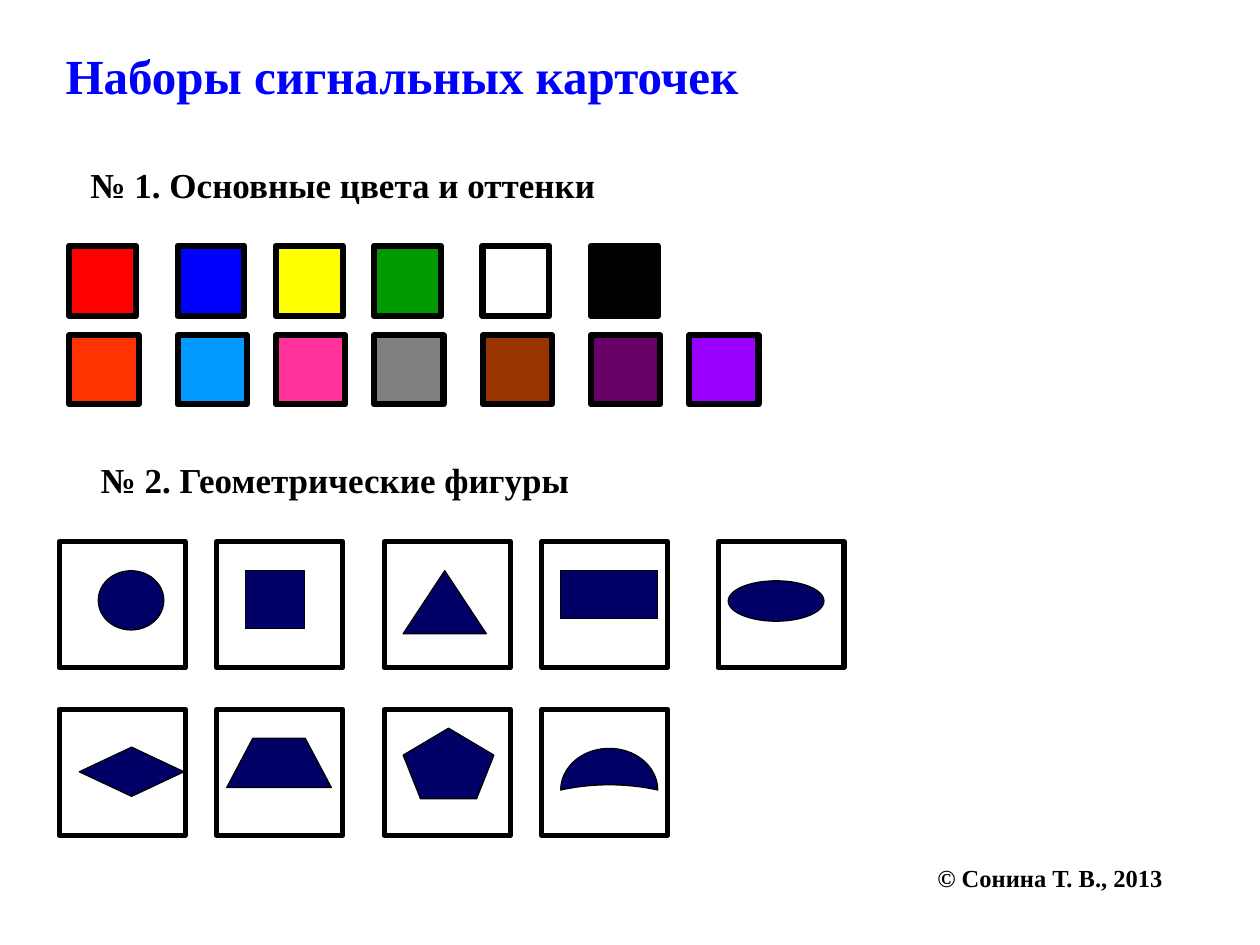
from pptx import Presentation
from pptx.dml.color import RGBColor
from pptx.enum.shapes import MSO_SHAPE as Shape
from pptx.enum.text import MSO_ANCHOR as Anchor, MSO_AUTO_SIZE as AutoSize, PP_ALIGN as Align
from pptx.util import Inches, Pt

FONT = "Times New Roman"
BLACK = RGBColor(0x00, 0x00, 0x00)
WHITE = RGBColor(0xFF, 0xFF, 0xFF)
BLUE = RGBColor(0x00, 0x00, 0xFF)
NAVY = RGBColor(0x00, 0x00, 0x66)
RED = RGBColor(0xFF, 0x00, 0x00)
YELLOW = RGBColor(0xFF, 0xFF, 0x00)
GREEN = RGBColor(0x00, 0x99, 0x00)
ORANGE = RGBColor(0xFF, 0x33, 0x00)
SKY = RGBColor(0x00, 0x99, 0xFF)
PINK = RGBColor(0xFF, 0x33, 0x99)
GRAY = RGBColor(0x80, 0x80, 0x80)
BROWN = RGBColor(0x99, 0x33, 0x00)
PLUM = RGBColor(0x66, 0x00, 0x66)
VIOLET = RGBColor(0x99, 0x00, 0xFF)

MAIN_COLORS = [RED, BLUE, YELLOW, GREEN, WHITE, BLACK]
SHADES = [ORANGE, SKY, PINK, GRAY, BROWN, PLUM, VIOLET]
COLOR_COLUMNS = [0, 0.86, 1.64, 2.42, 3.28, 4.14, 4.92]

CARD_SIZE = 1
CARD_COLUMNS = [0, 1.25, 2.58, 3.83, 5.23]
CARD_ROW_STEP = 1.33
# Each figure: shape, box relative to its card, rotation, adjustment
FIGURE_ROWS = [
    [
        (Shape.OVAL, (0.31, 0.23, 0.52, 0.47), 0, None),
        (Shape.RECTANGLE, (0.23, 0.23, 0.47, 0.46), 0, None),
        (Shape.ISOSCELES_TRIANGLE, (0.15, 0.23, 0.66, 0.5), 0, None),
        (Shape.RECTANGLE, (0.15, 0.23, 0.77, 0.38), 0, None),
        (Shape.OVAL, (0.08, 0.31, 0.76, 0.32), 0, None),
    ],
    [
        (Shape.DIAMOND, (0.38, 0.08, 0.39, 0.83), 270, None),
        (Shape.TRAPEZOID, (0.08, 0.23, 0.83, 0.39), 0, 0.53),
        (Shape.REGULAR_PENTAGON, (0.15, 0.15, 0.72, 0.56), 0, None),
        (Shape.MOON, (0.37, 0.09, 0.33, 0.77), 90, 0.875),
    ],
]


def add_figure(slide, kind, box, fill, line_width):
    sp = slide.shapes.add_shape(kind, *map(Inches, box))
    sp.shadow.inherit = False
    sp.fill.solid()
    sp.fill.fore_color.rgb = fill
    sp.line.color.rgb = BLACK
    sp.line.width = Pt(line_width)
    return sp


def write_line(sp, text, size, color=BLACK, align=Align.LEFT, anchor=Anchor.TOP):
    tf = sp.text_frame
    settings = {"word_wrap": False, "auto_size": AutoSize.SHAPE_TO_FIT_TEXT,
                "vertical_anchor": anchor}
    for name, value in settings.items():
        setattr(tf, name, value)
    p = tf.paragraphs[0]
    p.alignment = align
    r = p.add_run()
    r.text = text
    for name, value in {"name": FONT, "size": Pt(size), "bold": True}.items():
        setattr(r.font, name, value)
    r.font.color.rgb = color


def add_title(slide, box):
    title = slide.shapes.title
    for name, value in zip(("left", "top", "width", "height"), box):
        setattr(title, name, Inches(value))
    write_line(title, "Наборы сигнальных карточек", 28, BLUE, Align.CENTER)


def add_label(slide, box, text, size, align=Align.LEFT):
    sp = slide.shapes.add_textbox(*map(Inches, box))
    write_line(sp, text, size, align=align)


def add_color_row(slide, left, top, width, height, colors):
    for offset, color in zip(COLOR_COLUMNS, colors):
        box = (left + offset, top, width, height)
        add_figure(slide, Shape.RECTANGLE, box, color, 3.5)


def add_figure_cards(slide, left, top):
    for row, figures in enumerate(FIGURE_ROWS):
        y = top + row * CARD_ROW_STEP
        for offset, (kind, (dx, dy, w, h), rotation, adjustment) in zip(CARD_COLUMNS, figures):
            x = left + offset
            add_figure(slide, Shape.RECTANGLE, (x, y, CARD_SIZE, CARD_SIZE), WHITE, 3)
            sp = add_figure(slide, kind, (x + dx, y + dy, w, h), NAVY, 0.75)
            sp.rotation = rotation
            if adjustment is not None:
                sp.adjustments[0] = adjustment


def main():
    prs = Presentation()
    prs.slide_width, prs.slide_height = Inches(10), Inches(7.5)
    slide = prs.slides.add_slide(prs.slide_layouts[5])
    add_title(slide, (0.39, 0.31, 5.6, 0.57))
    add_label(slide, (0.62, 1.25, 4.24, 0.44), "№ 1. Основные цвета и оттенки", 20)
    add_color_row(slide, 0.55, 1.95, 0.53, 0.56, MAIN_COLORS)
    add_color_row(slide, 0.55, 2.66, 0.55, 0.55, SHADES)
    add_label(slide, (0.7, 3.59, 3.95, 0.44), "№ 2. Геометрические фигуры", 20)
    add_figure_cards(slide, 0.47, 4.3)
    add_label(slide, (7.34, 6.8, 2.01, 0.34), "© Сонина Т. В., 2013", 14, Align.JUSTIFY)
    prs.save("out.pptx")


if __name__ == "__main__":
    main()
